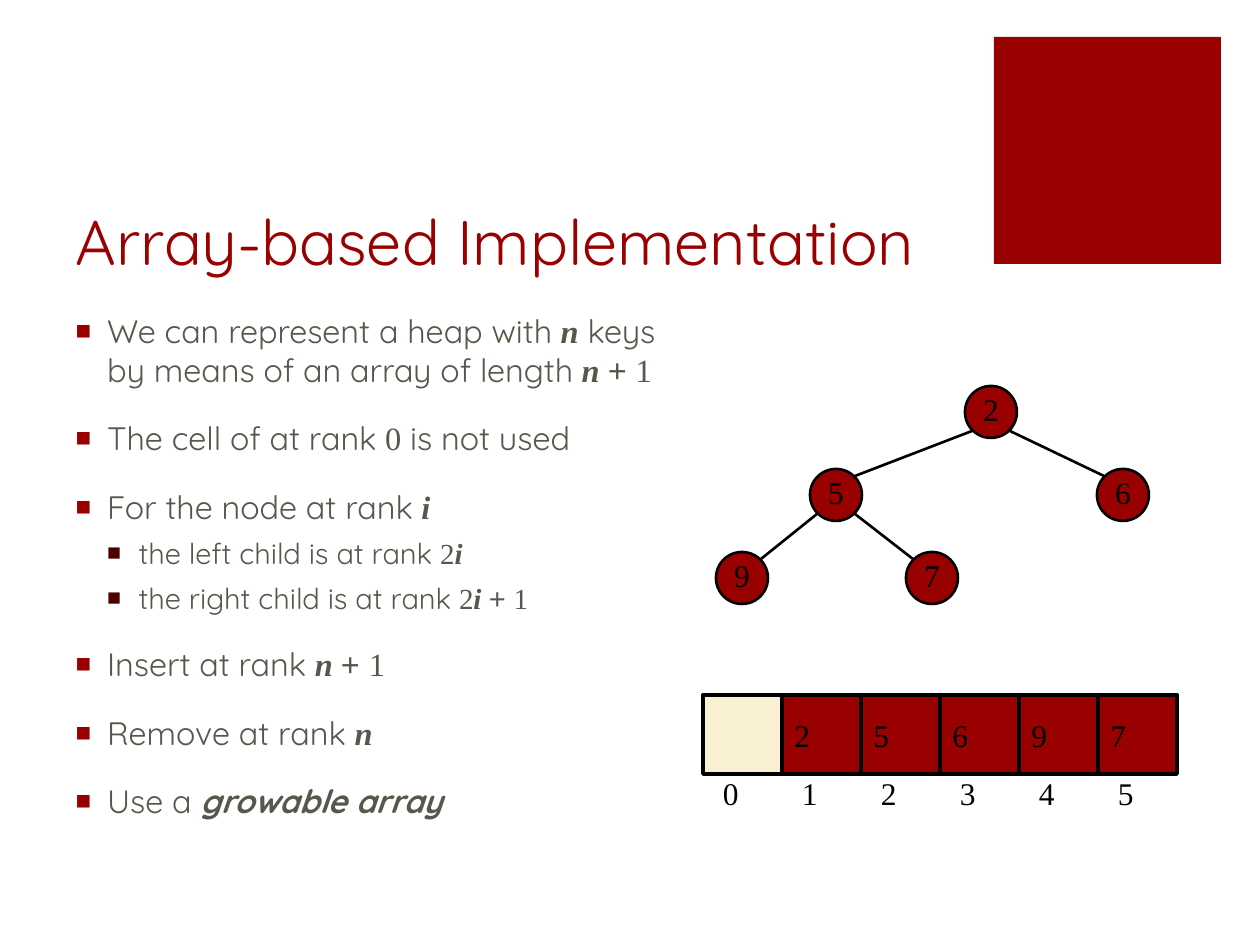
"""Build a slide on the array-based implementation of a heap."""
import pptx
import pptx.dml.color
import pptx.enum.shapes
import pptx.enum.text
import pptx.oxml
import pptx.oxml.ns
import pptx.util

PX = 914400 / 126
COLORS = {"red": "990000", "maroon": "4C0000", "gray": "59564B",
          "cream": "F8F0D0", "black": "000000"}
RECT = pptx.enum.shapes.MSO_SHAPE.RECTANGLE
OVAL = pptx.enum.shapes.MSO_SHAPE.OVAL
ANCHOR = pptx.enum.text.MSO_ANCHOR
ALIGN = pptx.enum.text.PP_ALIGN


def box(*lengths):
    return [round(length * PX) for length in lengths]


def write(paragraph, text, size=18, font="Times New Roman", color="black",
          strong=False, align=ALIGN.LEFT):
    paragraph.alignment = align
    run = paragraph.add_run()
    run.text = text
    run.font.size = pptx.util.Pt(size)
    run.font.name = font
    run.font.bold = run.font.italic = strong
    run.font.color.rgb = pptx.dml.color.RGBColor.from_string(COLORS[color])


deck = pptx.Presentation()
deck.slide_width, deck.slide_height = box(1260, 945)
slide = deck.slides.add_slide(deck.slide_layouts[1])
title, body = slide.placeholders

accent = slide.shapes.add_shape(RECT, *box(994, 37, 227, 227))
accent.shadow.inherit = False
accent.fill.solid()
accent.fill.fore_color.rgb = pptx.dml.color.RGBColor.from_string(COLORS["red"])
accent.line.fill.background()

title.left, title.top, title.width, title.height = box(63, 126, 897, 158)
title.text_frame.auto_size = pptx.enum.text.MSO_AUTO_SIZE.NONE
title.text_frame.vertical_anchor = ANCHOR.BOTTOM
write(title.text_frame.paragraphs[0], "Array-based Implementation",
      size=36, font="Quicksand", color="red")

body.left, body.top, body.width, body.height = box(63, 305, 621, 539)
body.text_frame.auto_size = pptx.enum.text.MSO_AUTO_SIZE.NONE
STYLES = {
    "plain": {"font": "Quicksand"},
    "term": {"font": "Quicksand", "strong": True},
    "variable": {"strong": True},
    "number": {},
    "operator": {"font": "Arial"},
}
LEVELS = [
    {"size": 18.5, "before": 16.8, "bullet": "red"},
    {"size": 16.6, "before": 5.6, "bullet": "maroon"},
]
PLUS_ONE = [("+ ", "operator"), ("1", "number")]
POINTS = [
    (0, [("We can represent a heap with ", "plain"), ("n", "variable"),
         (" keys by means of an array of length ", "plain"),
         ("n ", "variable"), *PLUS_ONE]),
    (0, [("The cell of at rank ", "plain"), ("0", "number"),
         (" is not used", "plain")]),
    (0, [("For the node at rank ", "plain"), ("i", "variable")]),
    (1, [("the left child is at rank ", "plain"), ("2", "number"),
         ("i", "variable")]),
    (1, [("the right child is at rank ", "plain"), ("2", "number"),
         ("i ", "variable"), *PLUS_ONE]),
    (0, [("Insert at rank ", "plain"), ("n ", "variable"), *PLUS_ONE]),
    (0, [("Remove at rank ", "plain"), ("n", "variable")]),
    (0, [("Use a ", "plain"), ("growable array", "term")]),
]
for index, (level, runs) in enumerate(POINTS):
    point = body.text_frame.add_paragraph() if index else body.text_frame.paragraphs[0]
    look = LEVELS[level]
    point.level = level
    point.space_before = pptx.util.Pt(look["before"])
    for text, style in runs:
        write(point, text, size=look["size"], color="gray", **STYLES[style])
    properties = point._p.get_or_add_pPr()
    properties.set("marL", str(228600 * (level + 1)))
    properties.set("indent", "-228600")
    namespace = pptx.oxml.ns.nsdecls("a")
    for bullet in (
        f'<a:buClr {namespace}><a:srgbClr val="{COLORS[look["bullet"]]}"/></a:buClr>',
        f'<a:buSzPct {namespace} val="80000"/>',
        f'<a:buFont {namespace} typeface="Arial"/>',
        f'<a:buChar {namespace} char="■"/>',
    ):
        properties.append(pptx.oxml.parse_xml(bullet))

NODE = 52
NODES = {"2": (965, 386), "6": (1097, 469), "5": (810, 469),
         "7": (906, 552), "9": (716, 552)}
CELL, ARRAY_LEFT, ARRAY_TOP = 79, 703, 695
figures = [(OVAL, key, left, top, NODE, "red", 1.5)
           for key, (left, top) in NODES.items()]
figures += [(RECT, key, ARRAY_LEFT + CELL * rank, ARRAY_TOP, CELL,
             "red" if key else "cream", 2.25)
            for rank, key in enumerate(["", "2", "5", "6", "9", "7"])]
for kind, key, left, top, side, fill, weight in figures:
    figure = slide.shapes.add_shape(kind, *box(left, top, side, side))
    figure.shadow.inherit = False
    figure.fill.solid()
    figure.fill.fore_color.rgb = pptx.dml.color.RGBColor.from_string(COLORS[fill])
    figure.line.color.rgb = pptx.dml.color.RGBColor.from_string(COLORS["black"])
    figure.line.width = pptx.util.Pt(weight)
    frame = figure.text_frame
    frame.vertical_anchor = ANCHOR.MIDDLE
    if kind == OVAL:
        frame.margin_left = frame.margin_right = frame.margin_top = 0
        frame.margin_bottom = pptx.util.Inches(0.05)
    if key:
        write(frame.paragraphs[0], key,
              align=ALIGN.CENTER if kind == OVAL else ALIGN.LEFT)

RIM = 19
for parent, child in ["25", "26", "59", "57"]:
    (parent_x, parent_y), (child_x, child_y) = [
        (NODES[key][0] + NODE // 2, NODES[key][1] + NODE // 2)
        for key in (parent, child)]
    reach = RIM if child_x > parent_x else -RIM
    edge = slide.shapes.add_connector(
        pptx.enum.shapes.MSO_CONNECTOR.STRAIGHT,
        *box(parent_x + reach, parent_y + RIM, child_x - reach, child_y - RIM))
    edge.line.color.rgb = pptx.dml.color.RGBColor.from_string(COLORS["black"])
    edge.line.width = pptx.util.Pt(1.5)
    edge._element.spPr.append(
        pptx.oxml.parse_xml(f'<a:effectLst {pptx.oxml.ns.nsdecls("a")}/>'))

for rank in range(6):
    label = slide.shapes.add_textbox(
        *box(ARRAY_LEFT + 20 + CELL * rank, ARRAY_TOP + CELL, 38, 50))
    frame = label.text_frame
    frame.word_wrap = True
    frame.margin_left = frame.margin_right = 0
    frame.margin_top = frame.margin_bottom = 0
    write(frame.paragraphs[0], str(rank))

deck.save("out.pptx")
